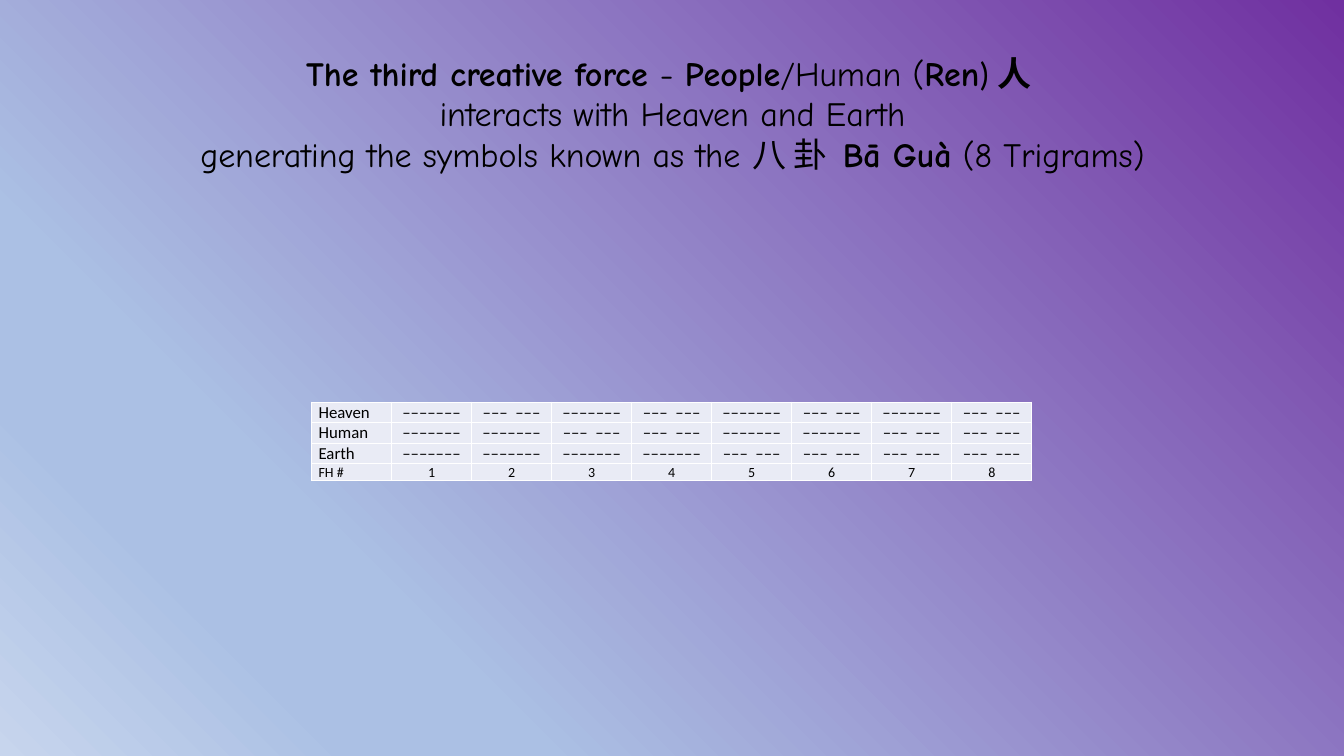
from dataclasses import dataclass

from lxml import etree
from pptx import Presentation
from pptx.dml.color import RGBColor
from pptx.enum.text import MSO_ANCHOR, MSO_AUTO_SIZE, PP_ALIGN
from pptx.oxml.ns import qn
from pptx.util import Inches, Pt

LEFT, CENTER = PP_ALIGN.LEFT, PP_ALIGN.CENTER
MIDDLE = MSO_ANCHOR.MIDDLE
NO_AUTOFIT = MSO_AUTO_SIZE.NONE
TITLE_ONLY = 5


@dataclass(frozen=True)
class Theme:
    title_font: str = "Comic Neue"
    body_font: str = "Calibri"
    title_size: float = 24.3
    line_size: float = 12
    number_size: float = 10
    ink: str = "000000"
    cell_fill: str = "E9EBF5"
    border: str = "FFFFFF"
    border_width: float = 1
    gradient: tuple = ((0, "7030A0"), (74, "ABC0E4"), (83, "ABC0E4"), (100, "C7D5ED"))
    gradient_angle: int = 225


def add_text(p, text, *, font, size, color, bold=False):
    """Append text to a paragraph, turning newlines into line breaks."""
    for i, line in enumerate(text.split("\n")):
        if i:
            p.add_line_break()
        if line:
            r = p.add_run()
            r.text = line
            r.font.name = font
            r.font.size = Pt(size)
            r.font.bold = bold
            r.font.color.rgb = RGBColor.from_string(color)


def add_solid_color(parent, color):
    fill = etree.SubElement(parent, qn("a:solidFill"))
    etree.SubElement(fill, qn("a:srgbClr"), val=color)


class SlideBuilder:
    def __init__(self, prs, theme):
        self.theme = theme
        self.s = prs.slides.add_slide(prs.slide_layouts[TITLE_ONLY])

    def background(self):
        fill = self.s.background.fill
        fill.gradient()
        fill.gradient_angle = self.theme.gradient_angle
        stops = next(self.s.element.iter(qn("a:gsLst")))
        for stop in list(stops):
            stops.remove(stop)
        for percent, color in self.theme.gradient:
            stop = etree.SubElement(stops, qn("a:gs"), pos=str(percent * 1000))
            etree.SubElement(stop, qn("a:srgbClr"), val=color)

    def title(self, parts, left, top, width, height):
        """Fill the title from (text, bold, font) parts."""
        sp = self.s.shapes.title
        sp.left, sp.top = Inches(left), Inches(top)
        sp.width, sp.height = Inches(width), Inches(height)
        tf = sp.text_frame
        tf.word_wrap = True
        tf.auto_size = NO_AUTOFIT
        tf.vertical_anchor = MIDDLE
        p = tf.paragraphs[0]
        p.alignment = CENTER
        p.line_spacing = 1.0
        for text, bold, font in parts:
            add_text(p, text, font=font, size=self.theme.title_size,
                     color=self.theme.ink, bold=bold)

    def table(self, rows, left, top, col_width, row_heights, sizes):
        n_cols = len(rows[0])
        frame = self.s.shapes.add_table(
            len(rows), n_cols, Inches(left), Inches(top),
            Inches(col_width * n_cols), Inches(sum(row_heights)))
        table = frame.table
        table.first_row = table.horz_banding = False
        for column in table.columns:
            column.width = Inches(col_width)
        for i, values in enumerate(rows):
            table.rows[i].height = Inches(row_heights[i])
            for j, value in enumerate(values):
                self.cell(table.cell(i, j), value, sizes[i], CENTER if j else LEFT)

    def cell(self, cell, text, size, align):
        cell.margin_left = cell.margin_right = Inches(0.07)
        cell.margin_top = cell.margin_bottom = 0
        cell.vertical_anchor = MIDDLE
        p = cell.text_frame.paragraphs[0]
        p.alignment = align
        add_text(p, text, font=self.theme.body_font, size=size, color=self.theme.ink)
        tc_pr = cell._tc.get_or_add_tcPr()
        for side in ("a:lnL", "a:lnR", "a:lnT", "a:lnB"):
            line = etree.SubElement(tc_pr, qn(side), w=str(Pt(self.theme.border_width)))
            add_solid_color(line, self.theme.border)
        cell.fill.solid()
        cell.fill.fore_color.rgb = RGBColor.from_string(self.theme.cell_fill)


def trigram_rows():
    """Each level alternates solid and broken lines at twice the period of the one above."""
    solid, broken = "–––––––", "–––  –––"
    rows = [[name] + [broken if n >> level & 1 else solid for n in range(8)]
            for level, name in enumerate(("Heaven", "Human", "Earth"))]
    return rows + [["FH #"] + [str(n) for n in range(1, 9)]]


def main():
    prs = Presentation()
    prs.slide_width, prs.slide_height = Inches(13.33), Inches(7.5)
    theme = Theme()
    slide = SlideBuilder(prs, theme)
    slide.background()
    comic, calibri = theme.title_font, theme.body_font
    slide.title([
        ("The third creative force ", True, comic),
        ("- ", False, comic),
        ("People", True, comic),
        ("/Human (", False, comic),
        ("Ren", True, comic),
        (") ", False, calibri),
        ("人 \n", True, calibri),
        ("interacts with Heaven and Earth\n"
         "generating the symbols known as the 八 卦  ", False, comic),
        ("Bā Guà", True, comic),
        (" (8 Trigrams)", False, comic),
    ], 0.92, 0.4, 11.5, 1.45)
    slide.table(trigram_rows(), left=3.09, top=3.99, col_width=0.794,
                row_heights=[0.2] * 3 + [0.17],
                sizes=[theme.line_size] * 3 + [theme.number_size])
    prs.save("out.pptx")


if __name__ == "__main__":
    main()
